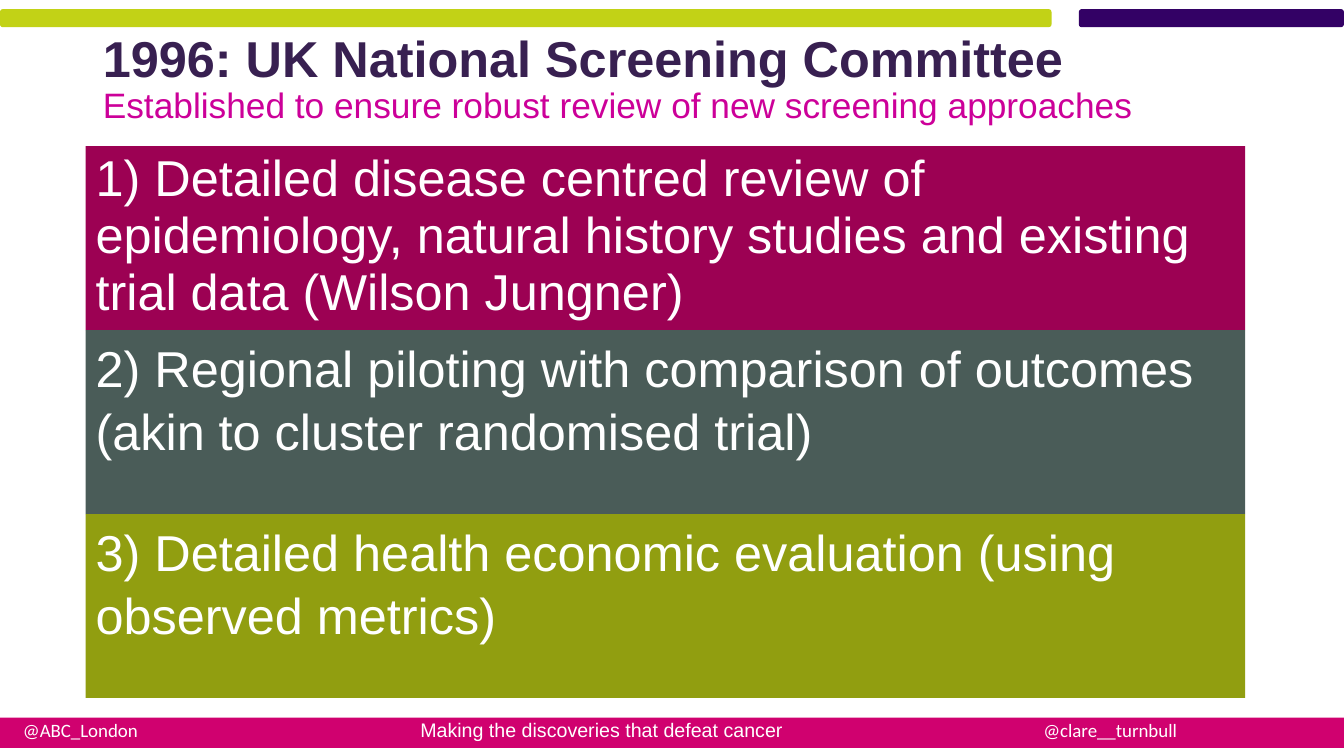
from dataclasses import dataclass

from lxml import etree
from pptx import Presentation
from pptx.dml.color import RGBColor
from pptx.enum.shapes import MSO_SHAPE
from pptx.enum.text import MSO_ANCHOR, PP_ALIGN
from pptx.oxml.ns import qn
from pptx.util import Inches, Pt

RECTANGLE = MSO_SHAPE.RECTANGLE
ROUNDED = MSO_SHAPE.ROUNDED_RECTANGLE
TOP, MIDDLE = MSO_ANCHOR.TOP, MSO_ANCHOR.MIDDLE
LEFT = PP_ALIGN.LEFT
TITLE_ONLY = 5


@dataclass(frozen=True)
class Theme:
    white: str = "FFFFFF"
    lime: str = "C2D216"
    violet: str = "330165"
    pink: str = "D0016F"
    title: str = "382051"
    subtitle: str = "CC0099"
    criteria: tuple = ("9C0153", "4A5C58", "919E10")
    font: str = "Arial"
    handle_font: str = "Calibri"
    large: float = 36
    medium: float = 25.2
    small: float = 14
    handle: float = 13.5


@dataclass(frozen=True)
class Bar:
    kind: int
    left: float
    top: float
    width: float
    height: float
    color: str


@dataclass(frozen=True)
class Criterion:
    text: str
    line_spacing: float


THEME = Theme()
SLIDE_WIDTH, SLIDE_HEIGHT = 13.33, 7.5
PANEL_LEFT, PANEL_TOP, PANEL_WIDTH, PANEL_HEIGHT = 0.85, 1.45, 11.5, 1.825

BARS = (
    Bar(RECTANGLE, 0, 7.12, SLIDE_WIDTH, 0.3, THEME.pink),
    Bar(ROUNDED, 0, 0.09, 10.43, 0.18, THEME.lime),
    Bar(ROUNDED, 10.7, 0.09, 2.63, 0.18, THEME.violet),
)
CRITERIA = (
    Criterion("1) Detailed disease centred review of epidemiology, natural history "
              "studies and existing trial data (Wilson Jungner)", 0.94),
    Criterion("2) Regional piloting with comparison of outcomes "
              "(akin to cluster randomised trial)", 1.04),
    Criterion("3) Detailed health economic evaluation (using observed metrics)", 1.04),
)
FOOTER = (
    ("@ABC_London", THEME.handle, THEME.handle_font),
    ("\tMaking the discoveries that defeat cancer", THEME.small, THEME.font),
    ("\t@clare__turnbull", THEME.handle, THEME.handle_font),
)
FOOTER_TABS = (3.94, 10.12)


def add_run(paragraph, text: str, size: float, color: str,
            font: str = THEME.font, bold: bool = False) -> None:
    run = paragraph.add_run()
    run.text = text
    for name, value in {"size": Pt(size), "name": font, "bold": bold}.items():
        setattr(run.font, name, value)
    run.font.color.rgb = RGBColor.from_string(color)


def set_frame(text_frame, anchor: int) -> None:
    values = {
        "word_wrap": True,
        "vertical_anchor": anchor,
        "margin_left": Inches(0.1),
        "margin_right": Inches(0.1),
        "margin_top": Inches(0.05),
        "margin_bottom": Inches(0.05),
    }
    for name, value in values.items():
        setattr(text_frame, name, value)


def add_bar(slide, bar: Bar):
    shape = slide.shapes.add_shape(
        bar.kind, Inches(bar.left), Inches(bar.top),
        Inches(bar.width), Inches(bar.height))
    shape.shadow.inherit = False
    shape.fill.solid()
    shape.fill.fore_color.rgb = RGBColor.from_string(bar.color)
    shape.line.fill.background()
    return shape


def add_footer(slide) -> None:
    box = slide.shapes.add_textbox(
        Inches(0.13), Inches(7.07), Inches(13.2), Inches(0.34))
    set_frame(box.text_frame, TOP)
    paragraph = box.text_frame.paragraphs[0]
    for text, size, font in FOOTER:
        add_run(paragraph, text, size, THEME.white, font)
    # Tab stops line up the slogan and the second handle
    properties = paragraph._p.get_or_add_pPr()
    tabs = etree.SubElement(properties, qn("a:tabLst"))
    for position in FOOTER_TABS:
        etree.SubElement(tabs, qn("a:tab"), pos=str(Inches(position)), algn="l")


def format_title(slide) -> None:
    title = slide.shapes.title
    box = {"left": 0.92, "top": 0.31, "width": 11.5, "height": 0.97}
    for name, value in box.items():
        setattr(title, name, Inches(value))
    set_frame(title.text_frame, MIDDLE)
    paragraph = title.text_frame.paragraphs[0]
    paragraph.alignment = LEFT
    paragraph.line_spacing = 0.9
    add_run(paragraph, "1996: UK National Screening Committee",
            THEME.large, THEME.title, bold=True)
    paragraph.add_line_break()
    add_run(paragraph, "Established to ensure robust review of new screening approaches",
            THEME.medium, THEME.subtitle)


def add_criterion(slide, index: int, criterion: Criterion) -> None:
    panel = add_bar(slide, Bar(
        RECTANGLE, PANEL_LEFT, PANEL_TOP + index * PANEL_HEIGHT,
        PANEL_WIDTH, PANEL_HEIGHT, THEME.criteria[index]))
    set_frame(panel.text_frame, TOP)
    paragraph = panel.text_frame.paragraphs[0]
    paragraph.alignment = LEFT
    paragraph.line_spacing = criterion.line_spacing
    add_run(paragraph, criterion.text, THEME.large, THEME.white)


def main() -> None:
    presentation = Presentation()
    presentation.slide_width = Inches(SLIDE_WIDTH)
    presentation.slide_height = Inches(SLIDE_HEIGHT)
    slide = presentation.slides.add_slide(presentation.slide_layouts[TITLE_ONLY])

    # Coloured bars and footer
    for bar in BARS:
        add_bar(slide, bar)
    add_footer(slide)

    # Title and the three criteria
    format_title(slide)
    for index, criterion in enumerate(CRITERIA):
        add_criterion(slide, index, criterion)

    presentation.save("out.pptx")


if __name__ == "__main__":
    main()
